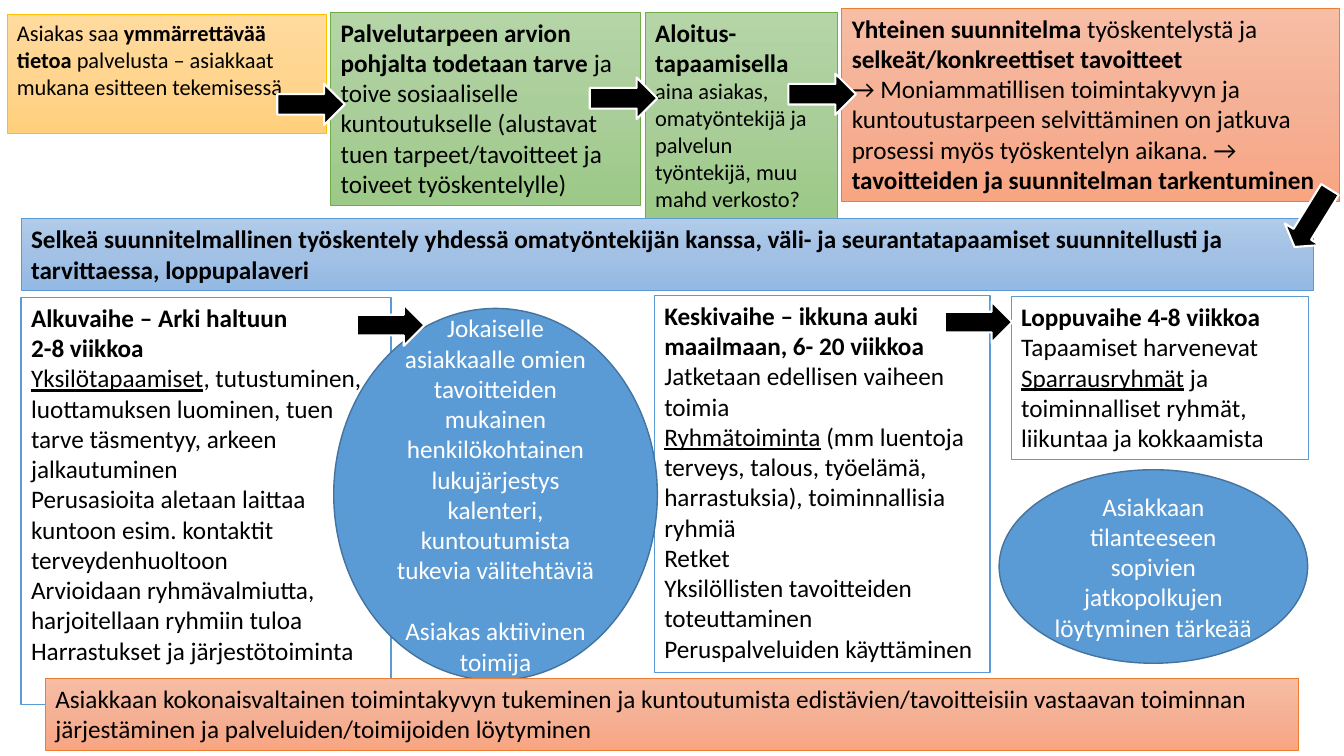
from copy import deepcopy

from pptx import Presentation
from pptx.dml.color import RGBColor
from pptx.enum.shapes import MSO_SHAPE as Preset
from pptx.enum.text import MSO_ANCHOR as Anchor, MSO_AUTO_SIZE as AutoSize, PP_ALIGN as Align
from pptx.oxml.ns import qn
from pptx.util import Emu, Pt

PX = 9144
SLIDE_SIZE = (1333, 750)
ARROW_SIZE = (67, 41)

THEME = {
    "font": "Calibri",
    "body": 18,
    "small": 16,
    "paragraph_gap": 22,
    "arrow": {"fill": ["000000"], "line": "FFFFFF", "width": 1.5},
    "green": {"fill": ["B5D5A7", "AACE9A", "9CC987"], "line": "70AD47", "width": 0.5, "text": "000000"},
    "orange": {"fill": ["F7BDA5", "F5B196", "F8A582"], "line": "ED7D31", "width": 0.5, "text": "000000"},
    "blue": {"fill": ["B1CBE9", "A3C1E5", "93B9E4"], "line": "5B9BD5", "width": 0.5, "text": "000000"},
    "yellow": {"fill": ["FFDB9E", "FFD590", "FFD07C"], "line": "FFC000", "width": 0.5, "text": "000000"},
    "white": {"fill": ["FFFFFF"], "line": "5B9BD5", "width": 1, "text": "000000"},
    "oval": {"fill": ["5B9BD5"], "line": "43739E", "width": 1, "text": "FFFFFF"},
}

PLAIN, BOLD, UNDERLINE, SMALL, SMALL_BOLD = (
    {}, {"bold": True}, {"underline": True}, {"size": THEME["small"]},
    {"size": THEME["small"], "bold": True},
)

BOXES = [
    ("green", (328, 12, 307, 192), [
        [("Palvelutarpeen arvion pohjalta todetaan tarve ", BOLD),
         ("ja toive sosiaaliselle kuntoutukselle (alustavat tuen tarpeet/tavoitteet ja toiveet työskentelylle)", PLAIN)],
    ]),
    ("green", (640, 12, 191, 205), [
        [("Aloitus-tapaamisella ", BOLD),
         ("aina asiakas, omatyöntekijä ja palvelun työntekijä, muu mahd verkosto?", SMALL)],
    ]),
    ("orange", (835, 8, 493, 192), [
        [("Yhteinen suunnitelma ", BOLD), ("työskentelystä ja ", PLAIN),
         ("selkeät/konkreettiset tavoitteet", BOLD)],
        [("→ Moniammatillisen toimintakyvyn ja kuntoutustarpeen selvittäminen on jatkuva "
          "prosessi myös työskentelyn aikana. → ", PLAIN),
         ("tavoitteiden ja suunnitelman tarkentuminen", BOLD)],
    ]),
    ("white", (21, 295, 367, 404), [
        [("Alkuvaihe – Arki haltuun", BOLD)],
        [("2-8 viikkoa", BOLD)],
        [("Yksilötapaamiset", UNDERLINE),
         (", tutustuminen, luottamuksen luominen, tuen tarve täsmentyy, arkeen jalkautuminen", PLAIN)],
        [("Perusasioita aletaan laittaa kuntoon esim. kontaktit terveydenhuoltoon", PLAIN)],
        [("Arvioidaan ryhmävalmiutta, harjoitellaan ryhmiin tuloa", PLAIN)],
        [("Harrastukset ja järjestötoiminta", PLAIN)],
    ]),
    ("white", (649, 293, 333, 374), [
        [("Keskivaihe – ikkuna auki maailmaan, 6- 20 viikkoa", BOLD)],
        [("Jatketaan edellisen vaiheen toimia", PLAIN)],
        [("Ryhmätoiminta", UNDERLINE),
         (" (mm luentoja terveys, talous, työelämä, harrastuksia), toiminnallisia ryhmiä", PLAIN)],
        [("Retket", PLAIN)],
        [("Yksilöllisten tavoitteiden toteuttaminen", PLAIN)],
        [("Peruspalveluiden käyttäminen", PLAIN)],
    ]),
    ("white", (1003, 294, 295, 162), [
        [("Loppuvaihe 4-8 viikkoa", BOLD)],
        [("Tapaamiset harvenevat", PLAIN)],
        [("Sparrausryhmät", UNDERLINE),
         (" ja toiminnalliset ryhmät, liikuntaa ja kokkaamista", PLAIN)],
    ]),
    ("oval", (331, 306, 321, 369), [
        [("Jokaiselle asiakkaalle omien tavoitteiden mukainen henkilökohtainen lukujärjestys "
          "kalenteri, kuntoutumista tukevia välitehtäviä", PLAIN)],
        [("Asiakas aktiivinen toimija", PLAIN)],
    ]),
    ("oval", (991, 466, 306, 192), [
        [("Asiakkaan tilanteeseen sopivien jatkopolkujen löytyminen tärkeää", PLAIN)],
    ]),
    ("orange", (45, 673, 1243, 71), [
        [("Asiakkaan kokonaisvaltainen toimintakyvyn tukeminen ja kuntoutumista "
          "edistävien/tavoitteisiin vastaavan toiminnan järjestäminen ja "
          "palveluiden/toimijoiden löytyminen", PLAIN)],
    ]),
    ("blue", (21, 217, 1282, 71), [
        [("Selkeä suunnitelmallinen työskentely yhdessä omatyöntekijän kanssa, väli- ja "
          "seurantatapaamiset suunnitellusti ja tarvittaessa, loppupalaveri", BOLD)],
    ]),
    ("yellow", (7, 14, 317, 118), [
        [("Asiakas saa ", SMALL), ("ymmärrettävää tietoa ", SMALL_BOLD),
         ("palvelusta – asiakkaat mukana esitteen tekemisessä", SMALL)],
    ]),
]

ARROWS = [(275, 83), (585, 77), (782, 73), (354, 302), (937, 299)]
TURNING_ARROW = {"at": (1268, 196), "rotation": 121.7, "head": 0.36}


def apply(target, values):
    for name, value in values.items():
        setattr(target, name, value)


def add_shape(slide, preset, box, look):
    shape = slide.shapes.add_shape(preset, *(Emu(length * PX) for length in box))
    shape.shadow.inherit = False
    colours = look["fill"]
    if len(colours) == 1:
        shape.fill.solid()
        shape.fill.fore_color.rgb = RGBColor.from_string(colours[0])
    else:
        shape.fill.gradient()
        shape.fill.gradient_angle = 270
        stops = shape.element.spPr.find(".//" + qn("a:gsLst"))
        stops.insert(1, deepcopy(stops[0]))
        for index, (stop, colour) in enumerate(zip(shape.fill.gradient_stops, colours)):
            stop.position = index / (len(colours) - 1)
            stop.color.rgb = RGBColor.from_string(colour)
    shape.line.color.rgb = RGBColor.from_string(look["line"])
    shape.line.width = Pt(look["width"])
    return shape


def write(shape, paragraphs, look, centred):
    frame = shape.text_frame
    apply(frame, {
        "word_wrap": True,
        "vertical_anchor": Anchor.MIDDLE if centred else Anchor.TOP,
        "auto_size": AutoSize.NONE if centred else AutoSize.SHAPE_TO_FIT_TEXT,
    })
    for index, runs in enumerate(paragraphs):
        paragraph = frame.add_paragraph() if index else frame.paragraphs[0]
        paragraph.alignment = Align.CENTER if centred else Align.LEFT
        if centred and index:
            paragraph.space_before = Pt(THEME["paragraph_gap"])
        for text, style in runs:
            run = paragraph.add_run()
            run.text = text
            values = {"name": THEME["font"], "bold": False, **style}
            values["size"] = Pt(style.get("size", THEME["body"]))
            apply(run.font, values)
            run.font.color.rgb = RGBColor.from_string(look["text"])


def main():
    presentation = Presentation()
    presentation.slide_width, presentation.slide_height = (Emu(side * PX) for side in SLIDE_SIZE)
    slide = presentation.slides.add_slide(presentation.slide_layouts[6])
    for kind, box, paragraphs in BOXES:
        centred = kind == "oval"
        shape = add_shape(slide, Preset.OVAL if centred else Preset.RECTANGLE, box, THEME[kind])
        write(shape, paragraphs, THEME[kind], centred)
    for place in [*ARROWS, TURNING_ARROW["at"]]:
        arrow = add_shape(slide, Preset.RIGHT_ARROW, place + ARROW_SIZE, THEME["arrow"])
    arrow.rotation = TURNING_ARROW["rotation"]
    arrow.adjustments[1] = TURNING_ARROW["head"]
    presentation.save("out.pptx")


if __name__ == "__main__":
    main()
